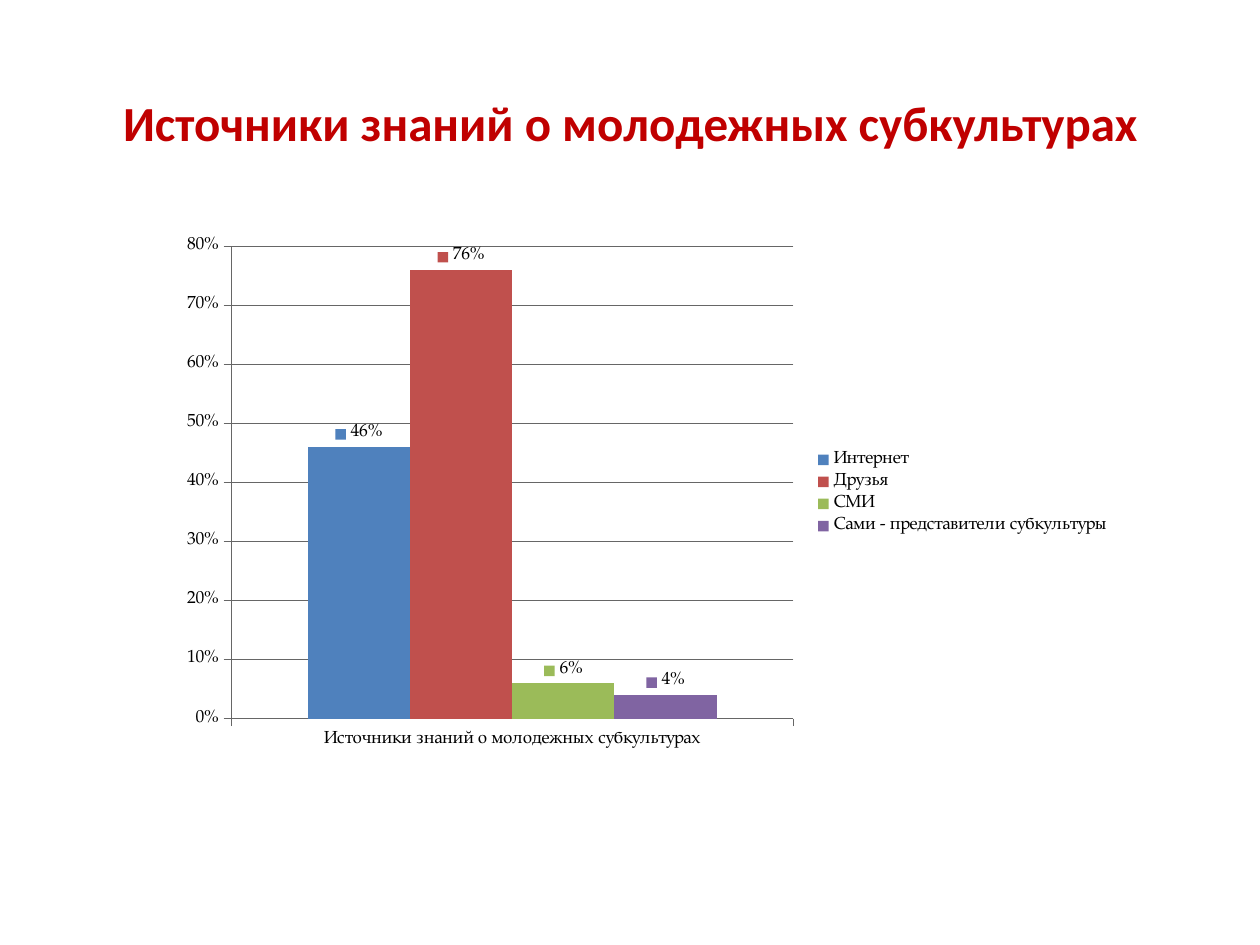
"""Build a slide with a column chart of where people learn about youth subcultures."""
import pptx
import pptx.chart.data
import pptx.dml.color
import pptx.enum.chart
import pptx.enum.text
import pptx.util

TITLE = "Источники знаний о молодежных субкультурах"
SOURCES = [
    ("Интернет", 0.46, "4F81BD"),
    ("Друзья", 0.76, "C0504D"),
    ("СМИ", 0.06, "9BBB59"),
    ("Сами - представители субкультуры", 0.04, "8064A2"),
]
SLIDE = (1260, 945)
TITLE_BOX = (0, 86, 1260, 72)
CHART_BOX = (168, 227, 955, 532)
SCALE = 914400 // 126


def px(*sizes):
    return [size * SCALE for size in sizes]


def color(code):
    return pptx.dml.color.RGBColor.from_string(code)


def style_font(font, name, size, code, bold=False):
    font.name = name
    font.size = pptx.util.Pt(size)
    font.color.rgb = color(code)
    font.bold = bold


def style_line(line):
    line.color.rgb = color("666666")
    line.width = pptx.util.Pt(0.5)


def add_title(slide):
    title = slide.shapes.title
    title.left, title.top, title.width, title.height = px(*TITLE_BOX)
    frame = title.text_frame
    frame.text = TITLE
    frame.word_wrap = True
    frame.vertical_anchor = pptx.enum.text.MSO_ANCHOR.MIDDLE
    line = frame.paragraphs[0]
    line.alignment = pptx.enum.text.PP_ALIGN.CENTER
    style_font(line.font, "Calibri", 28, "C00000", True)


def add_chart(slide):
    data = pptx.chart.data.CategoryChartData(number_format="0%")
    data.categories = [TITLE]
    for name, value, _ in SOURCES:
        data.add_series(name, [value])
    kind = pptx.enum.chart.XL_CHART_TYPE.COLUMN_CLUSTERED
    chart = slide.shapes.add_chart(kind, *px(*CHART_BOX), data).chart
    style_font(chart.font, "TeX Gyre Pagella", 10, "000000")
    chart.has_title = False
    chart.has_legend = True
    chart.legend.position = pptx.enum.chart.XL_LEGEND_POSITION.RIGHT
    chart.legend.include_in_layout = False

    for axis in (chart.category_axis, chart.value_axis):
        axis.major_tick_mark = pptx.enum.chart.XL_TICK_MARK.OUTSIDE
        style_line(axis.format.line)
    scale = chart.value_axis
    scale.minimum_scale, scale.maximum_scale, scale.major_unit = 0, 0.8, 0.1
    scale.tick_labels.number_format = "0%"
    scale.tick_labels.number_format_is_linked = False
    scale.has_major_gridlines = True
    style_line(scale.major_gridlines.format.line)

    plot = chart.plots[0]
    plot.gap_width, plot.overlap = 150, 0
    plot.vary_by_categories = False
    for series, (_, _, code) in zip(plot.series, SOURCES):
        series.format.fill.solid()
        series.format.fill.fore_color.rgb = color(code)
        labels = series.data_labels
        labels.show_value = True
        labels.show_legend_key = True
        labels.number_format = "0%"
        labels.number_format_is_linked = False
        labels.position = pptx.enum.chart.XL_LABEL_POSITION.OUTSIDE_END


def main():
    deck = pptx.Presentation()
    deck.slide_width, deck.slide_height = px(*SLIDE)
    slide = deck.slides.add_slide(deck.slide_layouts.get_by_name("Title Only"))
    add_title(slide)
    add_chart(slide)
    deck.save("out.pptx")


if __name__ == "__main__":
    main()
